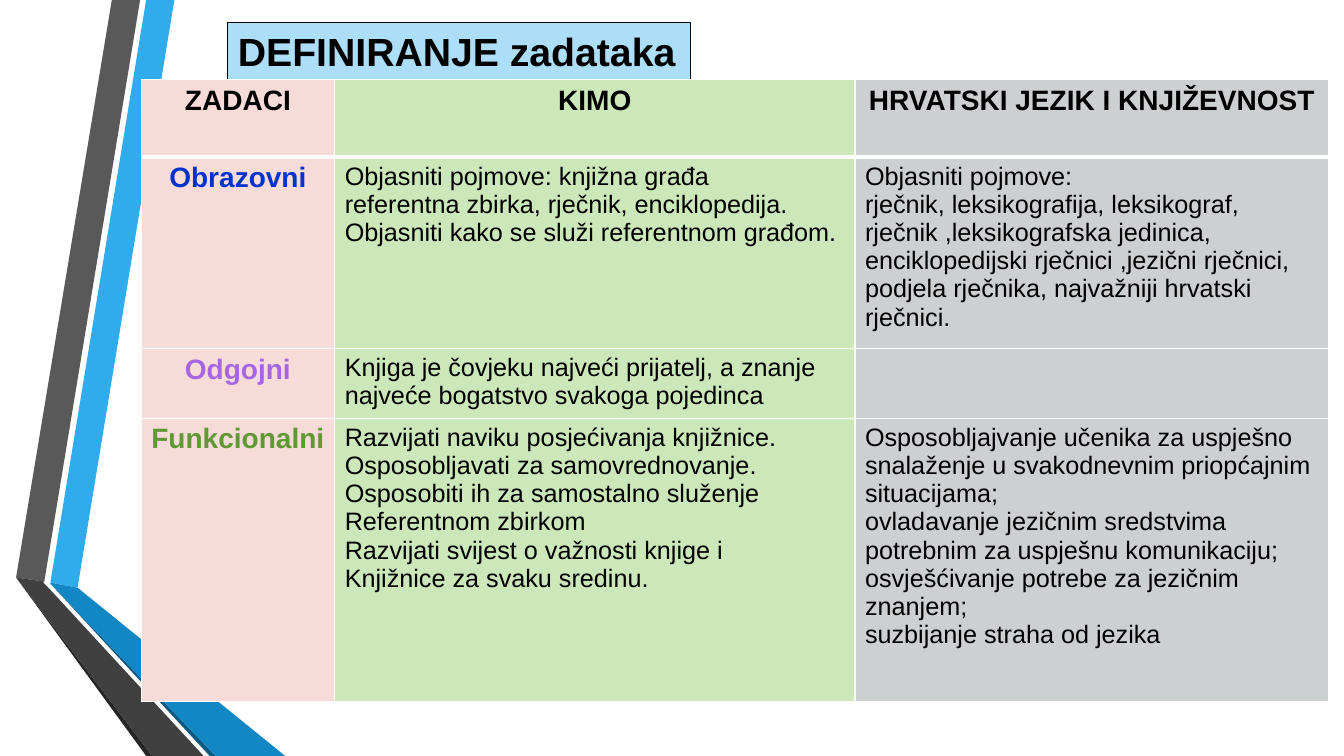
from lxml import etree
from pptx import Presentation
from pptx.dml.color import RGBColor
from pptx.enum.text import MSO_ANCHOR, MSO_AUTO_SIZE, PP_ALIGN
from pptx.oxml.ns import qn
from pptx.util import Inches, Pt

LEFT, CENTER = PP_ALIGN.LEFT, PP_ALIGN.CENTER
MIDDLE, NO_FIT = MSO_ANCHOR.MIDDLE, MSO_AUTO_SIZE.NONE
TITLE_ONLY = 5
FONT = "Arial"
HUNDREDTH = Inches(0.01)

RIBBONS = [
    ("30ACEC", [(50, 578), (77, 583), (173, 0), (145, 0)]),
    ("595959", [(139, 0), (111, 0), (16, 573), (44, 577)]),
    ("262626", [(16, 573), (145, 750), (151, 750)]),
    ("0C5A82", [(50, 579), (208, 750), (214, 750)]),
    ("1287C3", [(50, 579), (214, 750), (283, 750), (77, 583), (50, 578)]),
    ("404040", [(202, 750), (48, 583), (43, 578), (44, 577), (16, 573), (151, 750)]),
]

COL_WIDTHS = [1.92, 5.16, 4.7]
ROW_HEIGHTS = [0.77, 1.9, 0.69, 2.81]
COL_FILLS = ["F7DBD8", "CCE7B9", "CDD0D1"]
LABEL_COLORS = ["000000", "0033CC", "A666E1", "5F9934"]
ROWS = [
    ["ZADACI", "KIMO", "HRVATSKI JEZIK I KNJIŽEVNOST"],
    [
        "Obrazovni",
        "Objasniti pojmove: knjižna građa\vreferentna zbirka, rječnik, enciklopedija.\n"
        "Objasniti kako se služi referentnom građom.",
        "Objasniti pojmove:\n"
        "rječnik, leksikografija, leksikograf, rječnik ,leksikografska jedinica,\n"
        "enciklopedijski rječnici ,jezični rječnici, podjela rječnika, "
        "najvažniji hrvatski rječnici.",
    ],
    [
        "Odgojni",
        "Knjiga je čovjeku najveći prijatelj, a znanje najveće bogatstvo svakoga pojedinca",
        "",
    ],
    [
        "Funkcionalni",
        "Razvijati naviku posjećivanja knjižnice.\n"
        "Osposobljavati za samovrednovanje.\n"
        "Osposobiti ih za samostalno služenje\n"
        "Referentnom zbirkom\n"
        "Razvijati svijest o važnosti knjige i\n"
        "Knjižnice za svaku sredinu.",
        "Osposobljajvanje učenika za uspješno snalaženje u svakodnevnim "
        "priopćajnim situacijama;\n"
        "ovladavanje jezičnim sredstvima potrebnim za uspješnu komunikaciju;\n"
        "osvješćivanje potrebe za jezičnim znanjem;\n"
        "suzbijanje straha od jezika",
    ],
]


def rgb(color):
    return RGBColor.from_string(color)


def format_text(tf, size, color, bold, align):
    for p in tf.paragraphs:
        p.alignment = align
        for r in p.runs:
            r.font.name = FONT
            r.font.size = Pt(size)
            r.font.bold = bold
            r.font.color.rgb = rgb(color)


def add_ribbons(slide, x, y):
    for color, points in RIBBONS:
        fb = slide.shapes.build_freeform(*points[0], scale=HUNDREDTH)
        fb.add_line_segments(points[1:], close=True)
        sp = fb.convert_to_shape(Inches(x), Inches(y))
        sp.shadow.inherit = False
        sp.fill.solid()
        sp.fill.fore_color.rgb = rgb(color)
        sp.line.fill.background()


def add_title(slide, x, y, w, h):
    sp = slide.shapes.title
    sp.left, sp.top, sp.width, sp.height = map(Inches, (x, y, w, h))
    sp.fill.solid()
    sp.fill.fore_color.rgb = rgb("ACDEF7")
    sp.line.color.rgb = rgb("000000")
    sp.line.width = Pt(0.75)
    tf = sp.text_frame
    tf.text = "DEFINIRANJE zadataka"
    tf.word_wrap = False
    tf.auto_size = NO_FIT
    tf.vertical_anchor = MIDDLE
    format_text(tf, 28, "000000", True, LEFT)


def set_borders(cell, widths):
    tc_pr = cell._tc.get_or_add_tcPr()
    for side, width in widths.items():
        ln = etree.SubElement(tc_pr, qn("a:ln" + side), w=str(Pt(width)))
        fill = etree.SubElement(ln, qn("a:solidFill"))
        etree.SubElement(fill, qn("a:srgbClr"), val="FFFFFF")


def add_task_table(slide, x, y):
    w, h = sum(COL_WIDTHS), sum(ROW_HEIGHTS)
    table = slide.shapes.add_table(
        len(ROWS), len(COL_WIDTHS), *map(Inches, (x, y, w, h))
    ).table
    for col, width in zip(table.columns, COL_WIDTHS):
        col.width = Inches(width)
    for i, texts in enumerate(ROWS):
        table.rows[i].height = Inches(ROW_HEIGHTS[i])
        for j, text in enumerate(texts):
            cell = table.cell(i, j)
            set_borders(cell, {"L": 1, "R": 1, "T": 3 if i == 1 else 1,
                               "B": 3 if i == 0 else 1})
            cell.fill.solid()
            cell.fill.fore_color.rgb = rgb(COL_FILLS[j])
            cell.text_frame.text = text
            if i == 0 or j == 0:
                format_text(cell.text_frame, 20, LABEL_COLORS[i], True, CENTER)
            else:
                format_text(cell.text_frame, 18, "000000", False, LEFT)


def main():
    prs = Presentation()
    prs.slide_width, prs.slide_height = Inches(13.33), Inches(7.5)
    slide = prs.slides.add_slide(prs.slide_layouts[TITLE_ONLY])
    add_ribbons(slide, 0, 0)
    add_title(slide, 2.26, 0.22, 4.59, 0.57)
    add_task_table(slide, 1.4, 0.79)
    prs.save("out.pptx")


if __name__ == "__main__":
    main()
